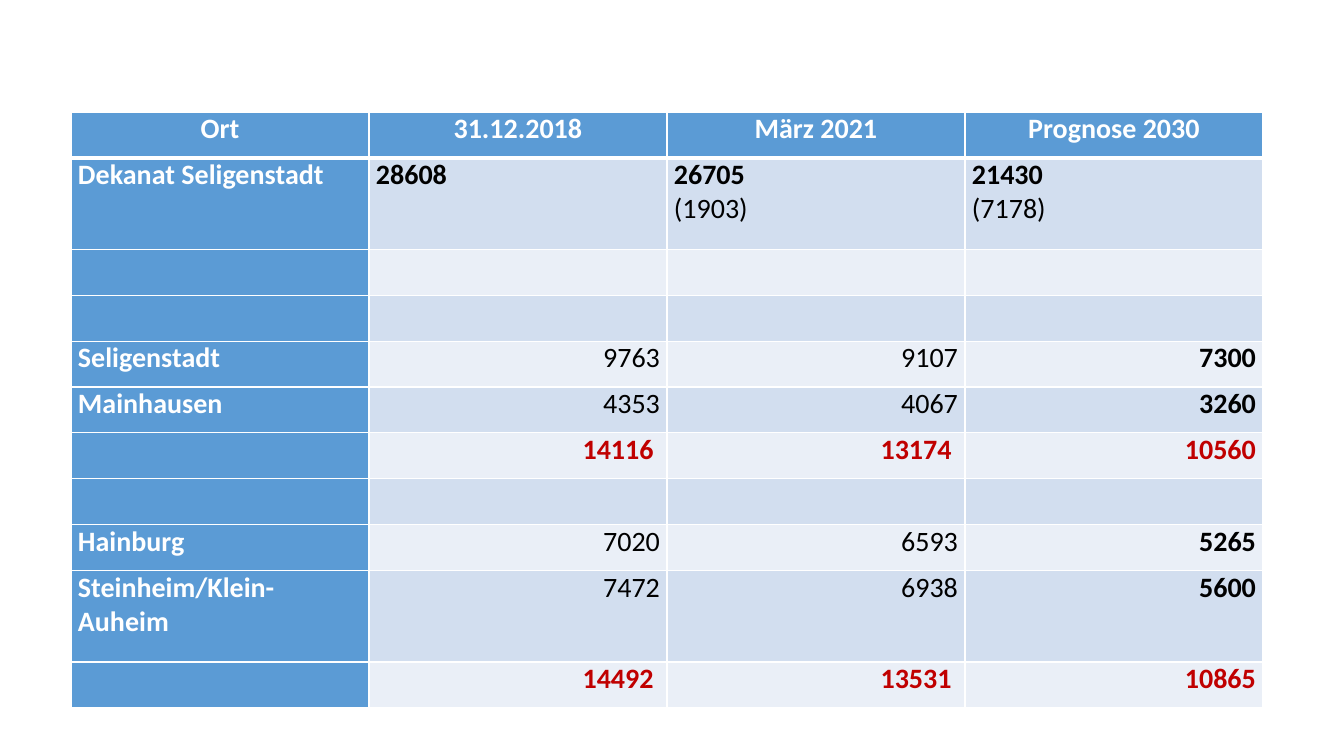
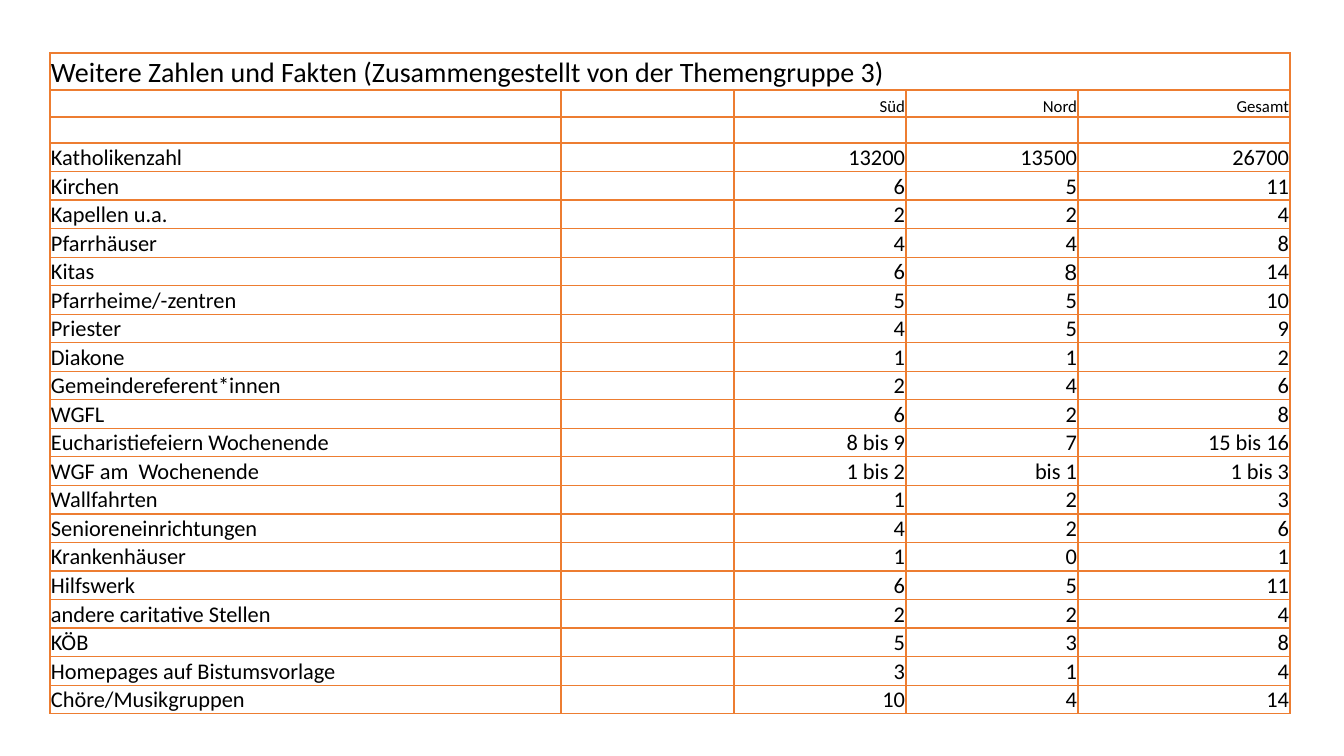
from lxml.etree import SubElement
from pptx import Presentation
from pptx.dml.color import RGBColor
from pptx.enum.text import MSO_ANCHOR, PP_ALIGN
from pptx.oxml.ns import qn
from pptx.util import Pt

PX = 914400 * 10 / 1008
LEFT, MID, RIGHT = PP_ALIGN.LEFT, PP_ALIGN.CENTER, PP_ALIGN.RIGHT
TOP, LOW = MSO_ANCHOR.TOP, MSO_ANCHOR.BOTTOM
WHITE = RGBColor(0xFF, 0xFF, 0xFF)
BLACK = RGBColor(0x00, 0x00, 0x00)
BLUE = RGBColor(0x5B, 0x9B, 0xD5)
BAND = RGBColor(0xD2, 0xDE, 0xEF)
PALE = RGBColor(0xEA, 0xEF, 0xF7)
RED = RGBColor(0xC0, 0x00, 0x00)
ORANGE = RGBColor(0xED, 0x7D, 0x31)


def grid(left, top, wide, high):
    slide = deck.slides.add_slide(deck.slide_layouts[6])
    frame = slide.shapes.add_table(
        len(high), len(wide), round(left * PX), round(top * PX),
        round(sum(wide) * PX), round(sum(high) * PX))
    table = frame.table
    table.first_row = table.horz_banding = False
    for col, size in zip(table.columns, wide):
        col.width = round(size * PX)
    for row, size in zip(table.rows, high):
        row.height = round(size * PX)
    return table


def put(cell, text, size=20, font="Calibri", color=BLACK, bold=False,
        align=LEFT, anchor=TOP, pad=(7, 0, 7, 0), fill=None,
        edge=WHITE, lines=(1, 1, 1, 1)):
    cell.margin_left, cell.margin_top, cell.margin_right, cell.margin_bottom = [
        round(gap * PX) for gap in pad]
    cell.vertical_anchor = anchor
    props = cell._tc.get_or_add_tcPr()
    for side, width in zip("LRTB", lines):
        line = SubElement(props, qn("a:ln" + side), w=str(Pt(width)))
        paint = SubElement(line, qn("a:solidFill"))
        SubElement(paint, qn("a:srgbClr"), val=str(edge))
    if fill is None:
        cell.fill.background()
    else:
        cell.fill.solid()
        cell.fill.fore_color.rgb = fill
    frame = cell.text_frame
    for num, part in enumerate(text.split("\n")):
        para = frame.add_paragraph() if num else frame.paragraphs[0]
        para.alignment = align
        if part:
            run = para.add_run()
            run.text = part
            run.font.size = Pt(size)
            run.font.name = font
            run.font.color.rgb = color
            run.font.bold = bold and num == 0
        else:
            SubElement(para._p, qn("a:endParaRPr"), sz=str(size * 100))


deck = Presentation()
deck.slide_width = round(1344 * PX)
deck.slide_height = round(756 * PX)

places = [
    ("Ort", "31.12.2018", "März 2021", "Prognose 2030"),
    ("Dekanat Seligenstadt", "28608", "26705\n(1903)", "21430\n(7178)"),
    ("", "", "", ""),
    ("", "", "", ""),
    ("Seligenstadt", "9763", "9107", "7300"),
    ("Mainhausen", "4353", "4067", "3260"),
    ("", "14116 ", "13174 ", "10560"),
    ("", "", "", ""),
    ("Hainburg", "7020", "6593", "5265"),
    ("Steinheim/Klein-Auheim", "7472", "6938", "5600"),
    ("", "14492 ", "13531 ", "10865"),
]
unit = 596 / 13
high = [unit * (2 if r in (1, 9) else 1) for r in range(len(places))]
table = grid(71, 112, [298] * 4, high)
for r, row in enumerate(places):
    for c, text in enumerate(row):
        head = r == 0 or c == 0
        total = not row[0]
        put(table.cell(r, c), text,
            color=WHITE if head else RED if total else BLACK,
            bold=head or total or r == 1 or c == 3,
            align=MID if r == 0 else LEFT if c == 0 or r == 1 else RIGHT,
            fill=BLUE if head else BAND if r % 2 else PALE,
            lines=(1, 1, 3 if r == 1 else 1, 3 if r == 0 else 1))

facts = [
    ("Weitere Zahlen und Fakten (Zusammengestellt von der Themengruppe 3)",
     "", "", ""),
    ("", "Süd", "Nord", "Gesamt"),
    ("", "", "", ""),
    ("Katholikenzahl", "13200", "13500", "26700"),
    ("Kirchen", "6", "5", "11"),
    ("Kapellen u.a.", "2", "2", "4"),
    ("Pfarrhäuser", "4", "4", "8"),
    ("Kitas", "6", "8", "14"),
    ("Pfarrheime/-zentren", "5", "5", "10"),
    ("Priester", "4", "5", "9"),
    ("Diakone", "1", "1", "2"),
    ("Gemeindereferent*innen", "2", "4", "6"),
    ("WGFL", "6", "2", "8"),
    ("Eucharistiefeiern Wochenende", "8 bis 9", "7", "15 bis 16"),
    ("WGF am  Wochenende", "1 bis 2", "bis 1", "1 bis 3"),
    ("Wallfahrten", "1", "2", "3"),
    ("Senioreneinrichtungen", "4", "2", "6"),
    ("Krankenhäuser", "1", "0", "1"),
    ("Hilfswerk", "6", "5", "11"),
    ("andere caritative Stellen", "2", "2", "4"),
    ("KÖB", "5", "3", "8"),
    ("Homepages auf Bistumsvorlage", "3", "1", "4"),
    ("Chöre/Musikgruppen", "10", "4", "14"),
]
high = [37, 27, 26] + [571 / 20] * 20
table = grid(50, 53, [511, 173, 172, 172, 212], high)
for r, (label, *values) in enumerate(facts):
    for c, text in enumerate([label, "", *values]):
        put(table.cell(r, c), text,
            size=20 if r == 0 else 12 if r < 3 else 16,
            font="Arial" if (label, c) == ("Kitas", 3) else "Calibri",
            align=RIGHT if c else LEFT,
            anchor=LOW, pad=(1, 1, 1, 0), edge=ORANGE)
table.cell(0, 0).merge(table.cell(0, 4))

deck.save("out.pptx")
